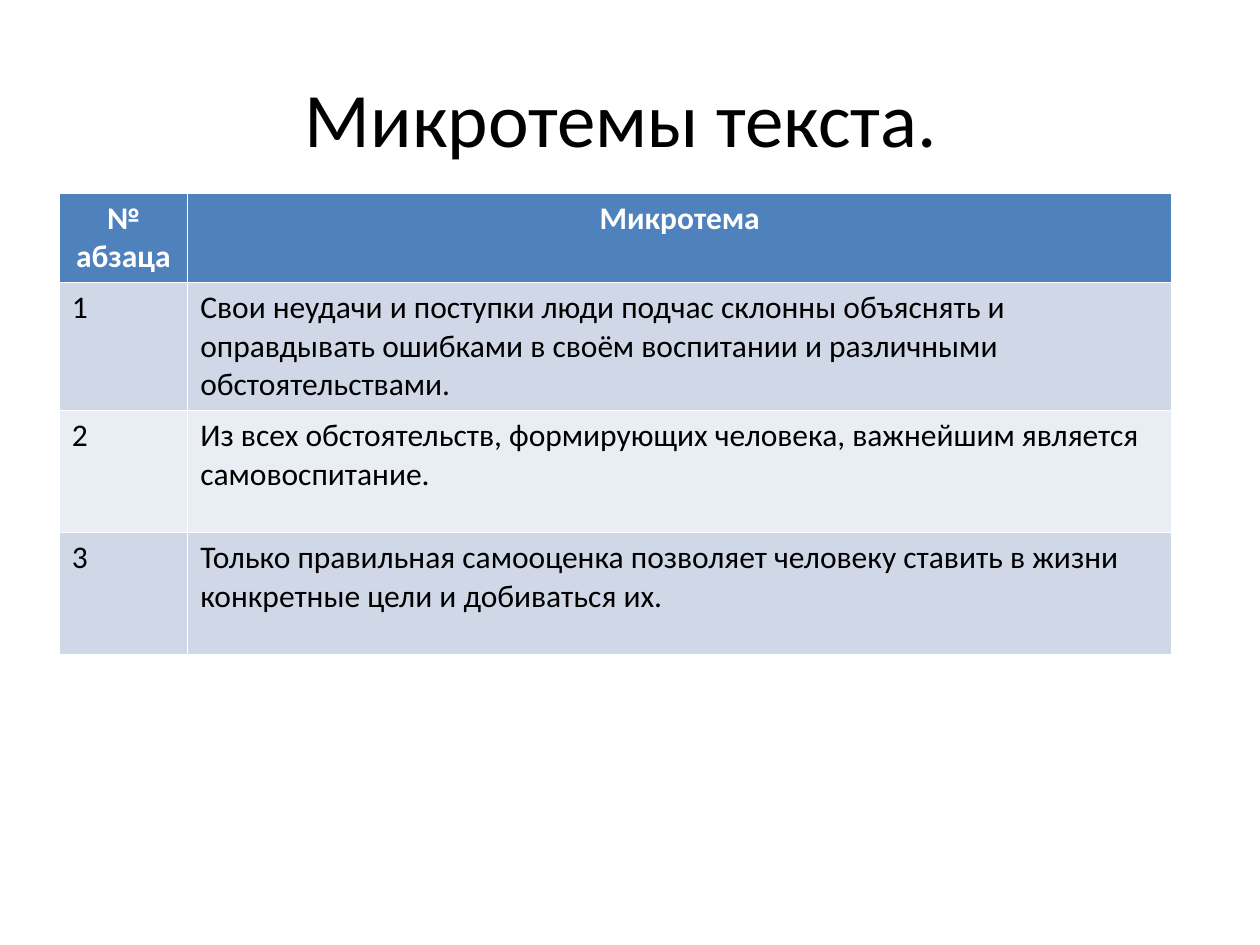
from pptx import Presentation
from pptx.dml.color import RGBColor
from pptx.enum import text
from pptx.util import Inches, Pt

FONT = "Calibri"
HEADINGS = ("№ абзаца", "Микротема")
MICROTHEMES = (
    "Свои неудачи и поступки люди подчас склонны объяснять и оправдывать "
    "ошибками в своём воспитании и различными обстоятельствами.",
    "Из всех обстоятельств, формирующих человека, важнейшим является самовоспитание.",
    "Только правильная самооценка позволяет человеку ставить в жизни "
    "конкретные цели и добиваться их.",
)


def color(value):
    return RGBColor.from_string(value)


def write(frame, words, size, ink, align, bold=False):
    paragraph = frame.paragraphs[0]
    paragraph.alignment = align
    run = paragraph.add_run()
    run.text = words
    run.font.name = FONT
    run.font.size = Pt(size)
    run.font.bold = bold
    run.font.color.rgb = color(ink)


def place_title(slide, left, top, width, height):
    title = slide.shapes.title
    title.left, title.top = Inches(left), Inches(top)
    title.width, title.height = Inches(width), Inches(height)
    title.text_frame.vertical_anchor = text.MSO_ANCHOR.MIDDLE
    write(title.text_frame, "Микротемы текста. ", 44, "000000", text.PP_ALIGN.CENTER)


def place_microthemes(slide, left, top, width, height):
    rows = [HEADINGS] + [(str(n), theme) for n, theme in enumerate(MICROTHEMES, 1)]
    table = slide.shapes.add_table(
        len(rows), len(HEADINGS),
        Inches(left), Inches(top), Inches(width), Inches(height),
    ).table
    number_width, heading_height = 1.02, 0.58
    table.columns[0].width = Inches(number_width)
    table.columns[1].width = Inches(width - number_width)
    for r, words in enumerate(rows):
        heading = r == 0
        table.rows[r].height = Inches(
            heading_height if heading else (height - heading_height) / len(MICROTHEMES)
        )
        band = "4F81BD" if heading else "D0D8E8" if r % 2 else "E9EDF4"
        ink = "FFFFFF" if heading else "000000"
        align = text.PP_ALIGN.CENTER if heading else text.PP_ALIGN.LEFT
        for c, entry in enumerate(words):
            cell = table.cell(r, c)
            cell.fill.solid()
            cell.fill.fore_color.rgb = color(band)
            write(cell.text_frame, entry, 18, ink, align, heading)


def main():
    deck = Presentation()
    deck.slide_width, deck.slide_height = Inches(10), Inches(7.5)
    slide = deck.slides.add_slide(deck.slide_layouts[5])
    place_title(slide, 0.5, 0.3, 9, 1.25)
    place_microthemes(slide, 0.47, 1.53, 8.83, 3.49)
    deck.save("out.pptx")


if __name__ == "__main__":
    main()
